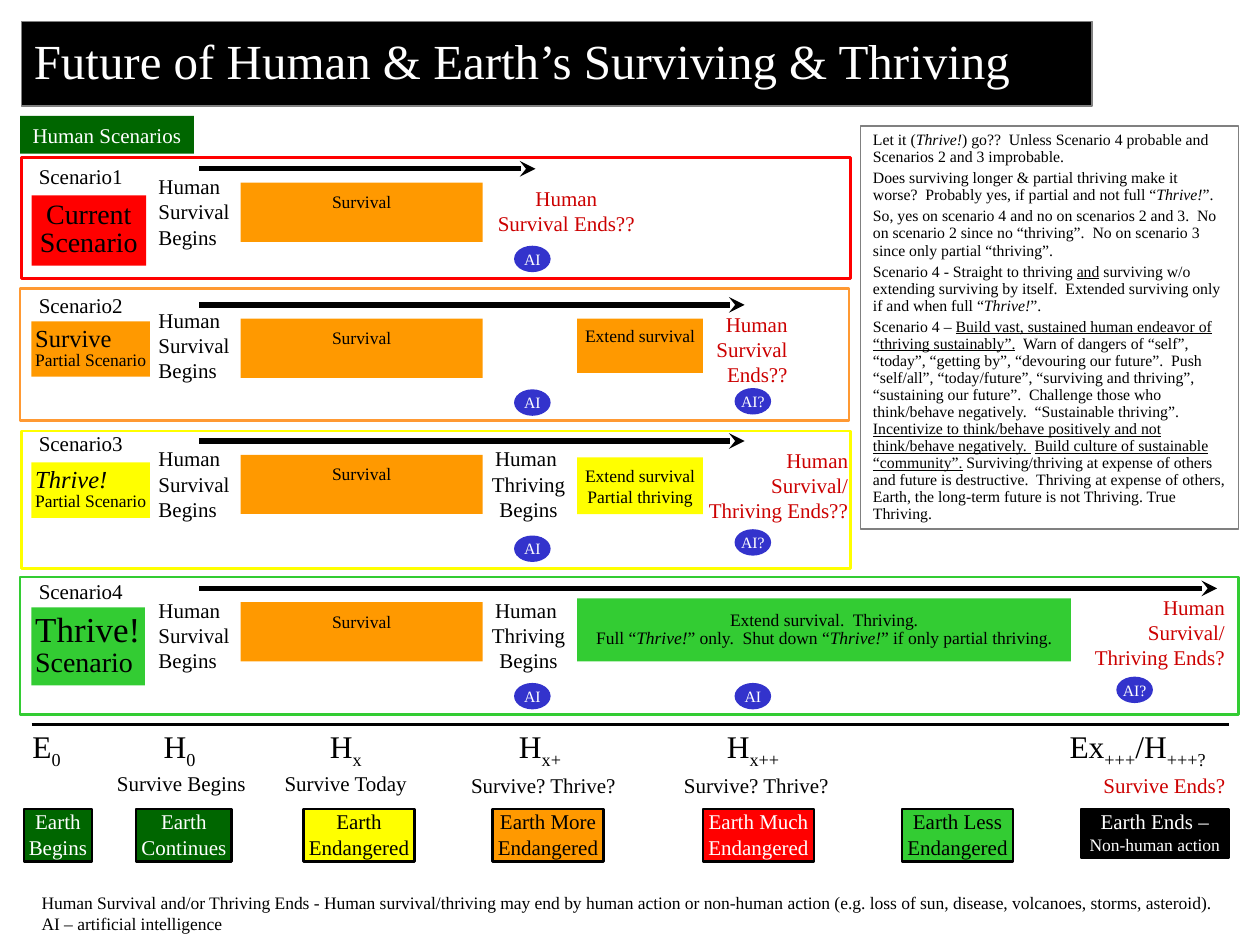
from lxml.etree import SubElement
from pptx import Presentation
from pptx.dml.color import RGBColor
from pptx.enum.shapes import MSO_CONNECTOR, MSO_SHAPE
from pptx.enum.text import MSO_ANCHOR, PP_ALIGN
from pptx.oxml.ns import qn
from pptx.util import Inches, Pt

FONT = "Times New Roman"
BLACK, WHITE, GREY = "000000", "FFFFFF", "808080"
RED, DARK_RED, ORANGE, YELLOW = "FF0000", "CC0000", "FF9900", "FFFF00"
GREEN, DARK_GREEN, BLUE = "33CC33", "006600", "3333CC"
ALIGN = {"l": PP_ALIGN.LEFT, "c": PP_ALIGN.CENTER, "r": PP_ALIGN.RIGHT}
# A run that starts with one of these marks takes the format; "|" splits runs.
MARKS = {"*": {"italic": True}, "_": {"underline": True}, "~": {}}

TITLE = "Future of Human & Earth’s Surviving & Thriving"
BEGINS = ["Human", "Survival", "Begins"]
THRIVING = ["Human ", "Thriving", "Begins"]

# Columns shared by the scenario lanes
TAG_X, ARROW_X, BEGIN_X, SURVIVAL_X = 0.25, 1.58, 1.16, 1.91
THRIVE_X, EXTEND_X, AI_X, AI_LATE_X = 3.8, 4.58, 4.08, 5.83

# frame, arrow and ends: (left, top, width, height); tag: width, height, fill, lines, sizes
LANES = [
    {"frame": (0.17, 1.25, 6.58, 0.96), "edge": RED, "label": 1.25,
     "arrow": (1.34, 4.25), "begins": 1.33, "survival": 1.45,
     "tag": (1.55, 0.91, 0.56, RED, ["Current", "Scenario"], (16, 16), "c"),
     "ends": (3.83, 1.42, 1.33, 0.5, ["Human", "Survival Ends??"], "c"),
     "ai": [(AI_X, 1.95, "AI")]},
    {"frame": (0.16, 2.29, 6.58, 1.05), "edge": "FF9933", "label": 2.27,
     "arrow": (2.42, 5.91), "begins": 2.39, "survival": 2.53,
     "tag": (2.55, 0.94, 0.44, ORANGE, ["Survive", "Partial Scenario"], (14, 10), "l"),
     "extend": (2.53, 1, 0.43, ORANGE, ["Extend survival"], 1, 0.21),
     "ends": (5.58, 2.42, 0.77, 0.7, ["Human", "Survival", "Ends??"], "r"),
     "ai": [(AI_X, 3.09, "AI"), (AI_LATE_X, 3.08, "AI?")]},
    {"frame": (0.17, 3.42, 6.58, 1.09), "edge": YELLOW, "label": 3.37,
     "arrow": (3.5, 5.91), "begins": 3.49, "survival": 3.61, "thriving": 3.49,
     "tag": (3.67, 0.94, 0.44, YELLOW, ["*Thrive!", "Partial Scenario"], (14, 10), "l"),
     "extend": (3.63, 1, 0.45, YELLOW, ["Extend survival", "Partial thriving"], 1, 0.05),
     "ends": (5.52, 3.5, 1.31, 0.7, ["Human", "Survival/", "Thriving Ends??"], "r"),
     "ai": [(AI_X, 4.25, "AI"), (AI_LATE_X, 4.2, "AI?")]},
    {"frame": (0.16, 4.58, 9.67, 1.09), "edge": GREEN, "label": 4.54,
     "arrow": (4.67, 9.66), "begins": 4.69, "survival": 4.78, "thriving": 4.69,
     "tag": (4.82, 0.9, 0.62, GREEN, ["Thrive!", "Scenario"], (20, 16), "l"),
     "extend": (4.75, 3.92, 0.5, GREEN, [
         "Extend survival.  Thriving.",
         "Full “|*Thrive!|” only.  Shut down “|*Thrive!|” if only partial thriving."], 0.85, 0.05),
     "ends": (8.58, 4.67, 1.24, 0.7, ["Human", "Survival/", "Thriving Ends?"], "r"),
     "ai": [(AI_X, 5.42, "AI"), (AI_LATE_X, 5.42, "AI"), (8.86, 5.37, "AI?")]},
]

NOTES = [
    "Let it (|*Thrive!|) go??  Unless Scenario 4 probable and Scenarios 2 and 3 improbable.",
    "Does surviving longer & partial thriving make it worse?  Probably yes, if partial and "
    "not full “|*Thrive!|”.",
    "So, yes on scenario 4 and no on scenarios 2 and 3.  No on scenario 2 since no “thriving”.  "
    "No on scenario 3 since only partial “thriving”.",
    "Scenario 4 - Straight to thriving |_and| surviving w/o extending surviving by itself.  "
    "Extended surviving only if and when full “|*Thrive!|”.",
    "Scenario 4 – |_Build vast, sustained human endeavor of “thriving sustainably”.|  Warn of "
    "dangers of “self”, “today”, “getting by”, “devouring our future”.  Push “self/all”, "
    "“today/future”, “surviving and thriving”, “sustaining our future”.  Challenge those who "
    "think/behave negatively.  “Sustainable thriving”.  |_Incentivize to think/behave positively "
    "and not think/behave negatively. | |_Build culture of sustainable “community”.| "
    "Surviving/thriving at expense of others and future is destructive.  Thriving at expense of "
    "others, Earth, the long-term future is not Thriving. True Thriving.",
]

# Timeline: symbols (left, text), captions (left, top, width, text, colour)
SYMBOLS = [(0.16, "E|~0"), (1.2, "H|~0"), (2.52, "H|~x"), (4.02, "H|~x+"),
           (5.67, "H|~x++"), (8.39, "Ex|~+++|/H|~+++?")]
CAPTIONS = [(0.83, 6.07, 1.23, "Survive Begins", BLACK), (2.16, 6.07, 1.19, "Survive Today", BLACK),
            (3.64, 6.08, 1.36, "Survive? Thrive?", BLACK),
            (5.33, 6.08, 1.36, "Survive? Thrive?", BLACK),
            (8.66, 6.08, 1.17, "Survive Ends?", DARK_RED)]
# Earth states: left, width, height, fill, text colour, lines, sizes
EARTH = [(0.19, 0.54, 0.42, DARK_GREEN, WHITE, ["Earth", "Begins"], (12, 12)),
         (1.08, 0.76, 0.42, DARK_GREEN, WHITE, ["Earth", "Continues"], (12, 12)),
         (2.41, 0.88, 0.42, YELLOW, BLACK, ["Earth", "Endangered"], (12, 12)),
         (3.91, 0.88, 0.42, ORANGE, BLACK, ["Earth More", "Endangered"], (12, 12)),
         (5.58, 0.88, 0.42, RED, WHITE, ["Earth Much", "Endangered"], (12, 12)),
         (7.16, 0.88, 0.42, GREEN, BLACK, ["Earth Less", "Endangered"], (12, 12)),
         (8.58, 1.17, 0.39, BLACK, WHITE, ["Earth Ends –", "Non-human action"], (12, 10))]
FOOTER = [
    "Human Survival and/or Thriving Ends - Human survival/thriving may end by human action or "
    "non-human action (e.g. loss of sun, disease, volcanoes, storms, asteroid).",
    "AI – artificial intelligence",
]

prs = Presentation()
prs.slide_width, prs.slide_height = Inches(10), Inches(7.5)
s = prs.slides.add_slide(prs.slide_layouts[6])


def rgb(color):
    return RGBColor.from_string(color)


def write(sp, lines, size=12, color=BLACK, align="l", wrap=False, anchor=MSO_ANCHOR.TOP,
          inset=(0.1, 0.05, 0.1, 0.05), spacing=1, before=0):
    """Fill a shape with paragraphs; size is one number or one per paragraph."""
    tf = sp.text_frame
    tf.word_wrap, tf.vertical_anchor = wrap, anchor
    for side, value in zip(("left", "top", "right", "bottom"), inset):
        setattr(tf, f"margin_{side}", Inches(value))
    sizes = size if isinstance(size, tuple) else (size,) * len(lines)
    for i, (line, points) in enumerate(zip(lines, sizes)):
        p = tf.add_paragraph() if i else tf.paragraphs[0]
        p.alignment, p.line_spacing = ALIGN[align], spacing
        p.space_before = Pt(before if i else 0)
        for piece in line.split("|"):
            mark = piece[:1] if piece[:1] in MARKS else ""
            r = p.add_run()
            r.text = piece[len(mark):]
            formats = {"name": FONT, "size": Pt(points), **MARKS.get(mark, {})}
            for name, value in formats.items():
                setattr(r.font, name, value)
            r.font.color.rgb = rgb(color)
            if mark == "~":
                r.font._element.set("baseline", "-25000")


def box(at, fill=None, edge=None, width=1.5, kind=MSO_SHAPE.RECTANGLE):
    sp = s.shapes.add_shape(kind, *map(Inches, at))
    sp.shadow.inherit = False
    for part, color in ((sp.fill, fill), (sp.line.fill, edge)):
        if color:
            part.solid()
            part.fore_color.rgb = rgb(color)
        else:
            part.background()
    if edge:
        sp.line.width = Pt(width)
    return sp


def text(at, lines, **style):
    write(s.shapes.add_textbox(*map(Inches, at)), lines, **style)


def rule(x1, x2, y, width, arrow=False):
    cx = s.shapes.add_connector(MSO_CONNECTOR.STRAIGHT, *map(Inches, (x1, y, x2, y)))
    cx.line.color.rgb, cx.line.width = rgb(BLACK), Pt(width)
    spPr = cx.element.spPr
    if arrow:
        SubElement(spPr.find(qn("a:ln")), qn("a:tailEnd"), type="stealth")
    SubElement(spPr, qn("a:effectLst"))


def lane(number, d):
    box(d["frame"], edge=d["edge"])
    text((0.21, d["label"], 0.87, 0.3), [f"Scenario{number}"])
    y, end = d["arrow"]
    rule(ARROW_X, end, y, 3, arrow=True)
    text((BEGIN_X, d["begins"], 0.77, 0.7), BEGINS)
    if "thriving" in d:
        text((THRIVE_X, d["thriving"], 0.79, 0.7), THRIVING, align="c")
    *at, lines, align = d["ends"]
    text(at, lines, color=DARK_RED, align=align)
    y, w, h, fill, lines, sizes, align = d["tag"]
    write(box((TAG_X, y, w, h), fill), lines, size=sizes, align=align, spacing=0.85,
          inset=(0.03, 0.05, 0.03, 0.05))
    bars = [(SURVIVAL_X, d["survival"], 1.92, 0.47, ORANGE, ["Survival"], 0.85, 0.19)]
    if "extend" in d:
        bars.append((EXTEND_X, *d["extend"]))
    for *at, fill, lines, spacing, bottom in bars:
        write(box(at, fill), lines, size=10, align="c", anchor=MSO_ANCHOR.MIDDLE,
              spacing=spacing, inset=(0.02, 0.05, 0.02, bottom))
    for x, y, label in d["ai"]:
        write(box((x, y, 0.29, 0.21), BLUE, kind=MSO_SHAPE.OVAL), [label], size=9, color=WHITE,
              align="c", anchor=MSO_ANCHOR.MIDDLE, inset=(0, 0, 0, 0))


write(box((0.17, 0.17, 8.5, 0.67), BLACK, GREY, 1), [TITLE], size=28, color=WHITE, wrap=True,
      anchor=MSO_ANCHOR.MIDDLE, spacing=0.9)
write(box((0.16, 0.92, 1.38, 0.3), DARK_GREEN), ["Human Scenarios"], color=WHITE)
for number, d in enumerate(LANES, 1):
    lane(number, d)
write(box((6.83, 1, 3, 3.2), edge=GREY, width=0.75), NOTES, size=9, wrap=True, spacing=0.9,
      before=2.25)

rule(0.25, 9.75, 5.75, 2.25)
for x, symbol in SYMBOLS:
    text((x, 5.72, 1.4, 0.4), [symbol], size=18, wrap=True)
for x, y, w, caption, color in CAPTIONS:
    text((x, y, w, 0.3), [caption], color=color)
for x, w, h, fill, color, lines, sizes in EARTH:
    write(box((x, 6.42, w, h), fill, BLACK), lines, size=sizes, color=color, align="c",
          inset=(0.03, 0, 0.03, 0))
text((0.33, 7.08, 9.33, 0.33), FOOTER, size=10, inset=(0, 0, 0, 0))

prs.save("out.pptx")
